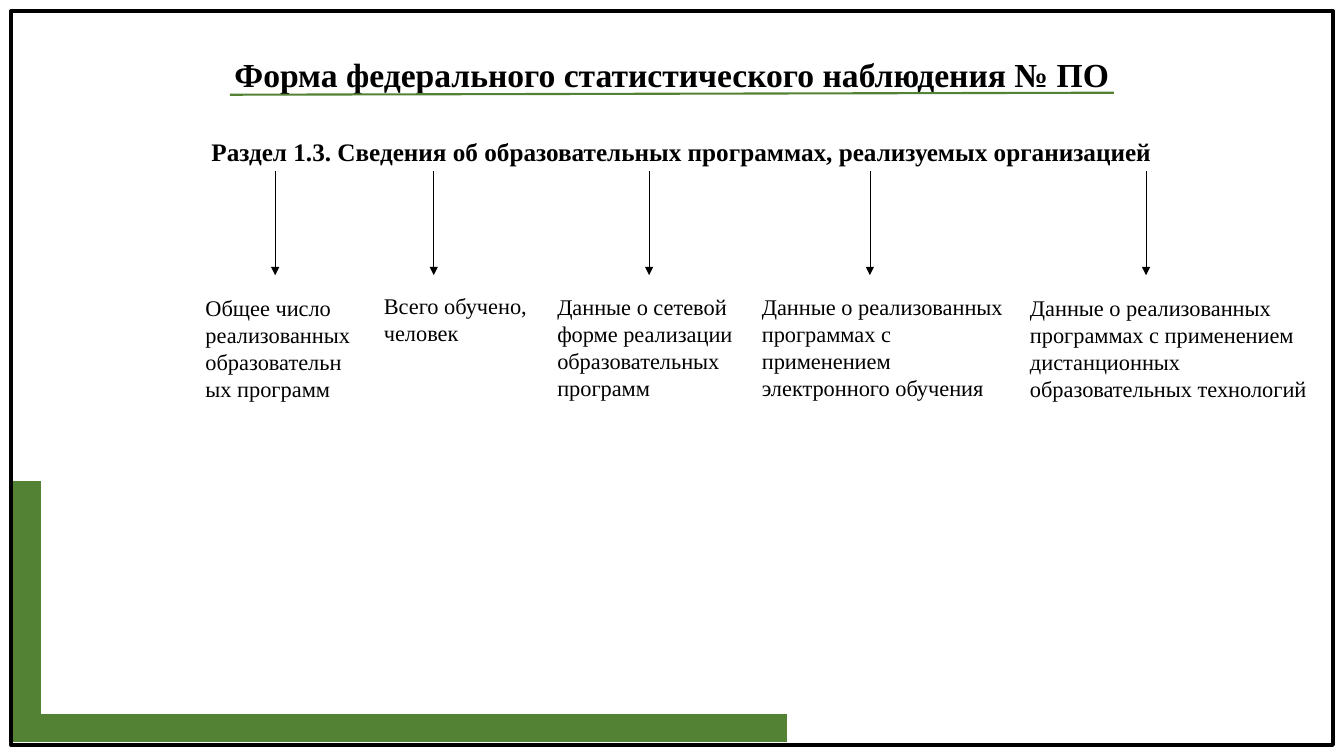
from lxml.etree import SubElement
from pptx import Presentation
from pptx.dml.color import RGBColor
from pptx.enum.shapes import MSO_CONNECTOR, MSO_SHAPE
from pptx.enum.text import MSO_ANCHOR, MSO_AUTO_SIZE, PP_ALIGN
from pptx.oxml.ns import qn
from pptx.util import Inches, Pt

COLUMNS, ROWS = 40, 22.5
CELL = Inches(1) / 3
FONT = "Times New Roman"
BLACK, GREEN, WHITE = "000000", "548235", "FFFFFF"
ARROW_LENGTH = 3.09

INDICATORS = [
    ("Общее число реализованных образовательных программ", (5.82, 5.1, 5.04, 7.05), 2.37, 3.51),
    ("Всего обучено, человек", (11.13, 5.1, 5.34, 5.37), 1.78, 3.45),
    ("Данные о сетевой форме реализации образовательных программ",
     (16.29, 5.1, 6.87, 7.02), 3.03, 3.48),
    ("Данные о реализованных программах с применением электронного обучения",
     (22.38, 5.1, 8.1, 7.02), 3.51, 3.48),
    ("Данные о реализованных программах с применением дистанционных образовательных технологий",
     (30.36, 5.1, 9.12, 7.95), 3.75, 3.51),
]


def grid(*lengths):
    """Convert grid cells to slide units."""
    return [round(length * CELL) for length in lengths]


def paint(color_format, color):
    """Apply a hex colour to a fill or a font colour."""
    color_format.rgb = RGBColor.from_string(color)


def set_line(shape, color, width):
    """Give a shape or connector a solid line."""
    shape.line.fill.solid()
    paint(shape.line.fill.fore_color, color)
    shape.line.width = Pt(width)


def write(shape, text, size, bold=False, align=PP_ALIGN.LEFT):
    """Set the wording and type of a shape."""
    frame = shape.text_frame
    frame.text = text
    frame.word_wrap = True
    frame.auto_size = MSO_AUTO_SIZE.SHAPE_TO_FIT_TEXT
    paragraph = frame.paragraphs[0]
    paragraph.alignment = align
    font = paragraph.runs[0].font
    font.name, font.size, font.bold = FONT, Pt(size), bold
    paint(font.color, BLACK)


def add_line(slide, start, end, color, width, arrow=False):
    """Draw a straight line, with an arrowhead at its end if asked."""
    connector = slide.shapes.add_connector(MSO_CONNECTOR.STRAIGHT, *grid(*start, *end))
    set_line(connector, color, width)
    if arrow:
        SubElement(connector.line._get_or_add_ln(), qn("a:tailEnd"), type="triangle")
    SubElement(connector._element.spPr, qn("a:effectLst"))


def add_frame(slide, box):
    """Draw the black border of the slide."""
    border = slide.shapes.add_shape(MSO_SHAPE.RECTANGLE, *grid(*box))
    border.shadow.inherit = False
    border.fill.background()
    set_line(border, BLACK, 3)


def add_corner(slide, box):
    """Draw the thick green angle along the left and bottom of the box."""
    left, top, width, height = box
    builder = slide.shapes.build_freeform(*grid(left, top))
    builder.add_line_segments(
        [grid(left, top + height), grid(left + width, top + height)], close=False)
    corner = builder.convert_to_shape()
    corner.shadow.inherit = False
    corner.fill.background()
    set_line(corner, GREEN, 20)
    SubElement(corner.line._get_or_add_ln(), qn("a:miter"), lim="800000")


def add_title(slide, box):
    """Place the title with its green underline."""
    left, top, width, height = box
    title = slide.shapes.add_textbox(*grid(*box))
    write(title, "Форма федерального статистического наблюдения № ПО", 24, True, PP_ALIGN.CENTER)
    add_line(slide, (left + 5.76, top + 0.9 * height),
             (left + width - 5.76, top + 0.86 * height), GREEN, 1.5)


def add_section(slide, box):
    """Place the section heading on its white band."""
    band = slide.shapes.add_shape(MSO_SHAPE.RECTANGLE, *grid(*box))
    band.shadow.inherit = False
    band.fill.solid()
    paint(band.fill.fore_color, WHITE)
    band.line.fill.background()
    band.text_frame.vertical_anchor = MSO_ANCHOR.MIDDLE
    write(band, "Раздел 1.3. Сведения об образовательных программах, реализуемых организацией",
          18, True, PP_ALIGN.CENTER)


def add_indicator(slide, text, box, arrow_offset, text_offset):
    """Place an arrow and the indicator it points to."""
    left, top, width, height = box
    arrow_x = left + arrow_offset
    add_line(slide, (arrow_x, top), (arrow_x, top + ARROW_LENGTH), BLACK, 0.5, arrow=True)
    label = slide.shapes.add_textbox(
        *grid(left, top + text_offset, width, height - text_offset))
    write(label, text, 16)


def main():
    """Build and save the presentation."""
    presentation = Presentation()
    presentation.slide_width, presentation.slide_height = grid(COLUMNS, ROWS)
    slide = presentation.slides.add_slide(presentation.slide_layouts[6])
    add_frame(slide, (0.33, 0.33, COLUMNS - 0.66, ROWS - 0.66))
    add_corner(slide, (0.81, 14.31, 22.62, 7.35))
    add_title(slide, (1.08, 1.47, 37.83, 1.5))
    add_section(slide, (4.95, 3.9, 30.66, 1.2))
    for indicator in INDICATORS:
        add_indicator(slide, *indicator)
    presentation.save("out.pptx")


if __name__ == "__main__":
    main()
